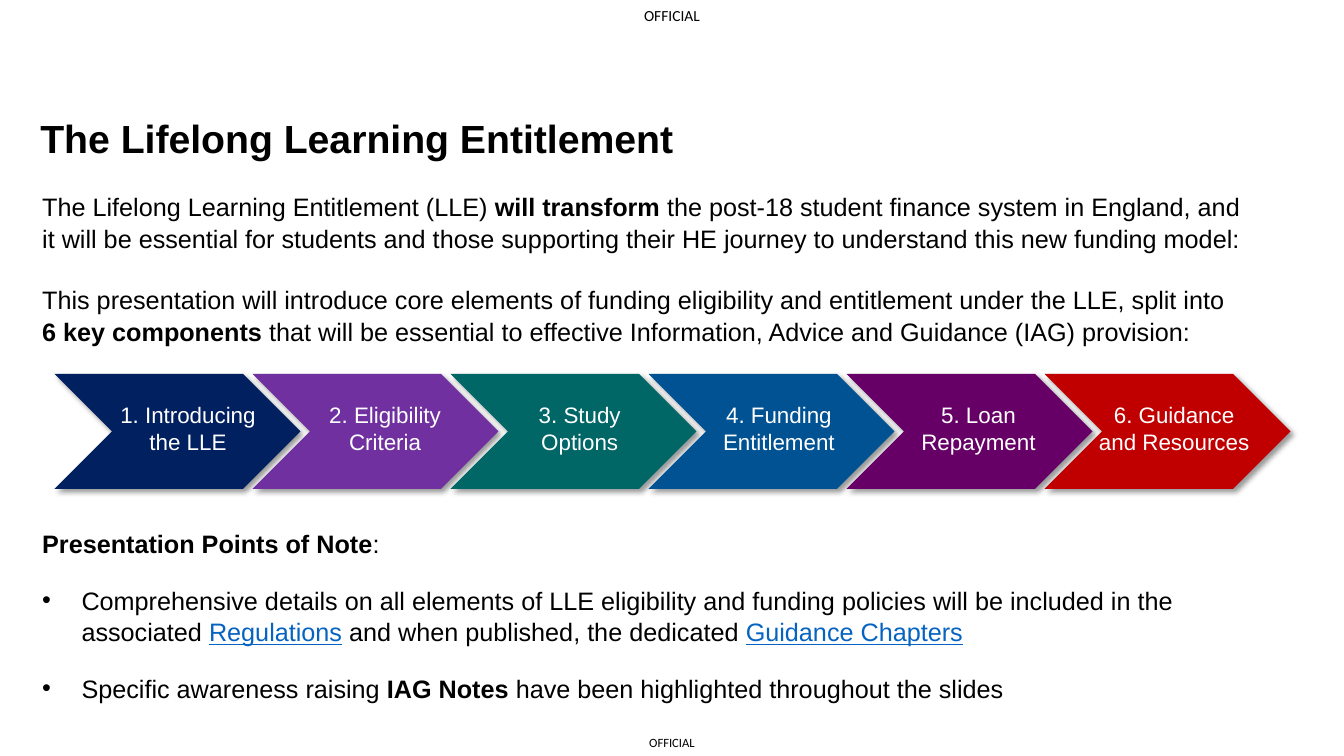
from lxml import etree
from pptx import Presentation
from pptx.dml.color import RGBColor
from pptx.enum import shapes, text
from pptx.oxml.ns import qn
from pptx.util import Inches, Pt

BLACK = RGBColor(0x00, 0x00, 0x00)
WHITE = RGBColor(0xFF, 0xFF, 0xFF)
LINK = RGBColor(0x05, 0x63, 0xC1)
NAVY = RGBColor(0x00, 0x20, 0x60)
VIOLET = RGBColor(0x70, 0x30, 0xA0)
TEAL = RGBColor(0x00, 0x66, 0x66)
BLUE = RGBColor(0x00, 0x52, 0x93)
PURPLE = RGBColor(0x66, 0x00, 0x66)
RED = RGBColor(0xC0, 0x00, 0x00)

# Content: a paragraph is a list of (text, style) runs; style is "", "b" or "link"
TITLE = "The Lifelong Learning Entitlement"
MARKING = "OFFICIAL"
INTRO = [
    [("The Lifelong Learning Entitlement (LLE) ", ""), ("will transform ", "b"),
     ("the post-18 student finance system in England, and", "")],
    [("it will be essential for students and those supporting their HE journey "
      "to understand this new funding model:", "")],
    [("This presentation will introduce core elements of funding eligibility and "
      "entitlement under the LLE, split into", "")],
    [("6 key components ", "b"),
     ("that will be essential to effective Information, Advice and Guidance (IAG) provision:", "")],
]
NOTES_HEAD = [[("Presentation Points of Note", "b"), (":", "")]]
NOTES = [
    [("Comprehensive details on all elements of LLE eligibility and funding policies "
      "will be included in the associated ", ""), ("Regulations", "link"),
     (" and when published, the dedicated ", ""), ("Guidance Chapters", "link")],
    [("Specific awareness raising ", ""), ("IAG Notes ", "b"),
     ("have been highlighted throughout the slides", "")],
]
# Label lines, colour, label left, label width
STEPS = [
    (("1. Introducing", "the LLE"), NAVY, 1.06, 1.56),
    (("2. Eligibility", "Criteria"), VIOLET, 3.01, 1.57),
    (("3. Study", "Options"), TEAL, 4.94, 1.57),
    (("4. Funding", "Entitlement"), BLUE, 6.99, 1.42),
    (("5. Loan", "Repayment"), PURPLE, 8.91, 1.54),
    (("6. Guidance", "and Resources"), RED, 10.76, 1.72),
]
FIRST_LEFT, LAST_LEFT = 0.54, 10.36
STEP_TOP, STEP_W, STEP_H = 3.71, 2.44, 1.14
LABEL_TOP = 3.68
BODY_LEFT, BODY_W = 0.32, 12.29
LINE_SPACING = 1.04


def write(tf, paras, size=18, font="Arial", color=BLACK, align=text.PP_ALIGN.LEFT,
          anchor=text.MSO_ANCHOR.TOP, insets=(0.1, 0.05, 0.1, 0.05), spacing=None,
          after=0, bullet=False, wrap=True):
    """Append paragraphs of styled runs to a text frame."""
    tf.word_wrap = wrap
    tf.vertical_anchor = anchor
    tf.margin_left, tf.margin_top, tf.margin_right, tf.margin_bottom = map(Inches, insets)
    for runs in paras:
        p = tf.paragraphs[0] if not tf.paragraphs[0].runs else tf.add_paragraph()
        if bullet:
            pPr = p._p.get_or_add_pPr()
            pPr.set("marL", str(Inches(0.39)))
            pPr.set("indent", str(-Inches(0.39)))
            etree.SubElement(pPr, qn("a:buFont"), typeface="Arial")
            etree.SubElement(pPr, qn("a:buChar"), char="•")
        p.alignment = align
        p.space_before, p.space_after = Pt(0), Pt(after)
        if spacing:
            p.line_spacing = spacing
        for words, style in runs:
            r = p.add_run()
            r.text = words
            f = r.font
            f.name, f.size = font, Pt(size)
            f.bold = style == "b"
            f.underline = style == "link"
            f.color.rgb = LINK if style == "link" else color


def add_box(left, top, width, height):
    return s.shapes.add_textbox(*map(Inches, (left, top, width, height))).text_frame


def add_shadow(sp):
    effects = etree.SubElement(sp._element.spPr, qn("a:effectLst"))
    shadow = etree.SubElement(effects, qn("a:outerShdw"), blurRad=str(Pt(4)), dist=str(Pt(3)),
                              dir="2700000", algn="tl", rotWithShape="0")
    shade = etree.SubElement(shadow, qn("a:srgbClr"), val="000000")
    etree.SubElement(shade, qn("a:alpha"), val="40000")


prs = Presentation()
prs.slide_width, prs.slide_height = Inches(13.33), Inches(7.5)
s = prs.slides.add_slide(prs.slide_layouts[5])

# Title
title = s.shapes.title
title.left, title.top, title.width, title.height = map(Inches, (0.3, 1.04, 11.5, 0.71))
write(title.text_frame, [[(TITLE, "b")]], size=28, anchor=text.MSO_ANCHOR.MIDDLE, spacing=0.9)

# Security markings at the foot and head
for box, size in (((6.3, 7.23, 0.73, 0.27), 9), ((6.23, 0, 0.87, 0.31), 11)):
    write(add_box(*box), [[(MARKING, "")]], size=size, font="Calibri", wrap=False,
          align=text.PP_ALIGN.CENTER, anchor=text.MSO_ANCHOR.MIDDLE, insets=(0, 0, 0, 0))

# Introduction, with a gap between its two statements
intro = add_box(BODY_LEFT, 1.84, BODY_W, 1.7)
write(intro, INTRO, spacing=LINE_SPACING)
intro.paragraphs[2].space_before = Pt(21.5)

# Points of note
notes = add_box(BODY_LEFT, 5.18, BODY_W, 1.9)
write(notes, NOTES_HEAD, spacing=LINE_SPACING, after=18)
write(notes, NOTES, spacing=LINE_SPACING, after=18, bullet=True)

# Chevron row
pitch = (LAST_LEFT - FIRST_LEFT) / (len(STEPS) - 1)
for i, (lines, color, label_left, label_w) in enumerate(STEPS):
    sp = s.shapes.add_shape(shapes.MSO_SHAPE.CHEVRON, Inches(FIRST_LEFT + i * pitch),
                            Inches(STEP_TOP), Inches(STEP_W), Inches(STEP_H))
    sp.fill.solid()
    sp.fill.fore_color.rgb = color
    sp.line.fill.background()
    add_shadow(sp)
    write(add_box(label_left, LABEL_TOP, label_w, STEP_H), [[(line, "")] for line in lines],
          size=16, color=WHITE, align=text.PP_ALIGN.CENTER, anchor=text.MSO_ANCHOR.MIDDLE,
          insets=(0.08, 0.03, 0.03, 0.03))

prs.save("out.pptx")
